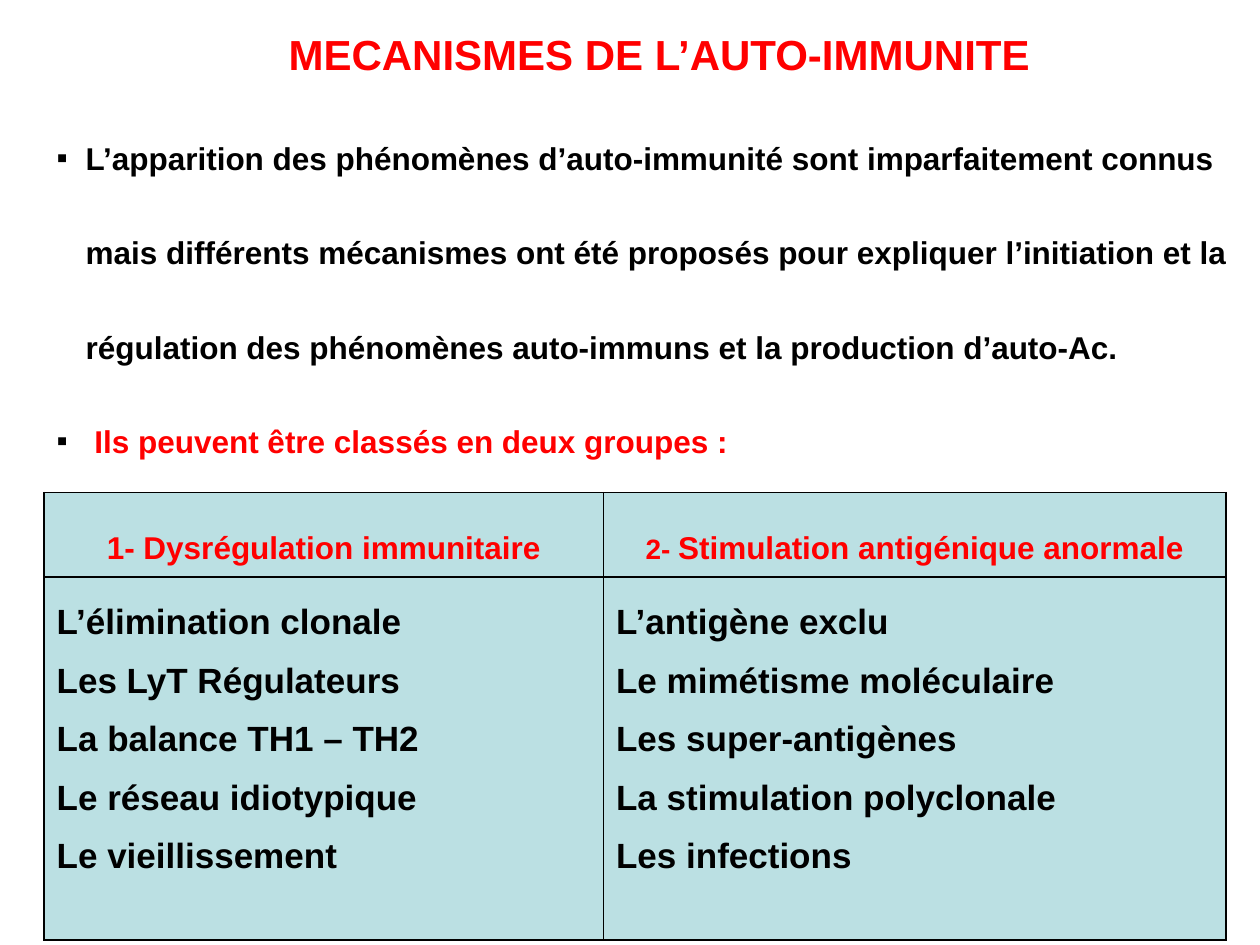
"""Build a slide on the mechanisms of autoimmunity: title, two bullets and a two-column table."""
import pptx
import pptx.dml.color
import pptx.enum.text
import pptx.oxml
import pptx.oxml.ns
import pptx.util
from dataclasses import dataclass

Inches, Pt = pptx.util.Inches, pptx.util.Pt
PP_ALIGN, MSO_ANCHOR = pptx.enum.text.PP_ALIGN, pptx.enum.text.MSO_ANCHOR


@dataclass(frozen=True)
class Theme:
    font: str = "Arial"
    accent: str = "FF0000"
    text: str = "000000"
    cell: str = "BBE0E3"
    title: int = 24
    body: int = 18
    number: int = 16
    item: int = 20


THEME = Theme()

TITLE = "MECANISMES DE L’AUTO-IMMUNITE"
BULLETS = [
    ("L’apparition des phénomènes d’auto-immunité sont imparfaitement connus mais "
     "différents mécanismes ont été proposés pour expliquer l’initiation et la "
     "régulation des phénomènes auto-immuns et la production d’auto-Ac.", THEME.text),
    (" Ils peuvent être classés en deux groupes\u00a0:", THEME.accent),
]
GROUPS = [
    {"width": 4.44,
     "header": [("1- Dysrégulation immunitaire", THEME.body)],
     "items": ["L’élimination clonale", "Les LyT Régulateurs", "La balance TH1 – TH2",
               "Le réseau idiotypique", "Le vieillissement"]},
    {"width": 4.94,
     "header": [("2- ", THEME.number), ("Stimulation antigénique anormale", THEME.body)],
     "items": ["L’antigène exclu", "Le mimétisme moléculaire", "Les super-antigènes",
               "La stimulation polyclonale", "Les infections"]},
]
ROW_HEIGHTS = [0.67, 2.88]


def rgb(value):
    return pptx.dml.color.RGBColor.from_string(value)


def style(r, size, color):
    r.font.name = THEME.font
    r.font.size = Pt(size)
    r.font.bold = True
    r.font.color.rgb = rgb(color)


def xml(text):
    return pptx.oxml.parse_xml(text.replace(">", f' {pptx.oxml.ns.nsdecls("a")}>', 1))


def place(sp, left, top, width, height):
    sp.left, sp.top, sp.width, sp.height = map(Inches, (left, top, width, height))
    tf = sp.text_frame
    tf.auto_size = pptx.enum.text.MSO_AUTO_SIZE.NONE
    tf.word_wrap = True
    tf.vertical_anchor = MSO_ANCHOR.TOP
    return tf


def add_title(sp):
    tf = place(sp, 1, 0.21, 9, 0.49)
    tf.margin_left, tf.margin_top = Inches(1.29), Inches(0.09)
    tf.text = TITLE
    p = tf.paragraphs[0]
    p.alignment = PP_ALIGN.LEFT
    p.line_spacing = 0.8
    style(p.runs[0], THEME.title, THEME.accent)


def add_bullets(sp):
    tf = place(sp, 0.35, 0.6, 9.61, 3.13)
    tf.text = "\n".join(text for text, _ in BULLETS)
    for p, (_, color) in zip(tf.paragraphs, BULLETS):
        p.line_spacing = Pt(54)
        p.space_before = Pt(0)
        style(p.runs[0], THEME.body, color)
        pPr = p._p.get_or_add_pPr()
        pPr.set("marL", str(Inches(0.23)))
        pPr.set("indent", str(-Inches(0.23)))
        pPr.append(xml(f'<a:buClr><a:srgbClr val="{THEME.text}"/></a:buClr>'))
        pPr.append(xml(f'<a:buFont typeface="{THEME.font}"></a:buFont>'))
        pPr.append(xml('<a:buChar char="▪"></a:buChar>'))


def format_cell(cell):
    cell.vertical_anchor = MSO_ANCHOR.TOP
    cell.fill.solid()
    cell.fill.fore_color.rgb = rgb(THEME.cell)
    tcPr = cell._tc.get_or_add_tcPr()
    for i, side in enumerate(("lnL", "lnR", "lnT", "lnB")):
        tcPr.insert(i, xml(f'<a:{side} w="{Pt(1)}"><a:solidFill>'
                           f'<a:srgbClr val="{THEME.text}"/></a:solidFill></a:{side}>'))


def add_groups(slide):
    width = sum(group["width"] for group in GROUPS)
    table = slide.shapes.add_table(
        len(ROW_HEIGHTS), len(GROUPS), Inches(0.35), Inches(3.91),
        Inches(width), Inches(sum(ROW_HEIGHTS))).table
    for row, height in zip(table.rows, ROW_HEIGHTS):
        row.height = Inches(height)
    for col, group in enumerate(GROUPS):
        table.columns[col].width = Inches(group["width"])
        header, body = table.cell(0, col), table.cell(1, col)
        format_cell(header)
        format_cell(body)
        header.margin_top = Inches(0.3)
        p = header.text_frame.paragraphs[0]
        p.alignment = PP_ALIGN.CENTER
        for text, size in group["header"]:
            r = p.add_run()
            r.text = text
            style(r, size, THEME.accent)
        body.text_frame.text = "\n".join(group["items"])
        for p in body.text_frame.paragraphs:
            p.line_spacing = 1.5
            style(p.runs[0], THEME.item, THEME.text)


def main():
    prs = pptx.Presentation()
    prs.slide_width, prs.slide_height = Inches(10), Inches(7.5)
    slide = prs.slides.add_slide(prs.slide_layouts[1])
    add_title(slide.shapes.title)
    add_bullets(slide.placeholders[1])
    add_groups(slide)
    prs.save("out.pptx")


if __name__ == "__main__":
    main()
